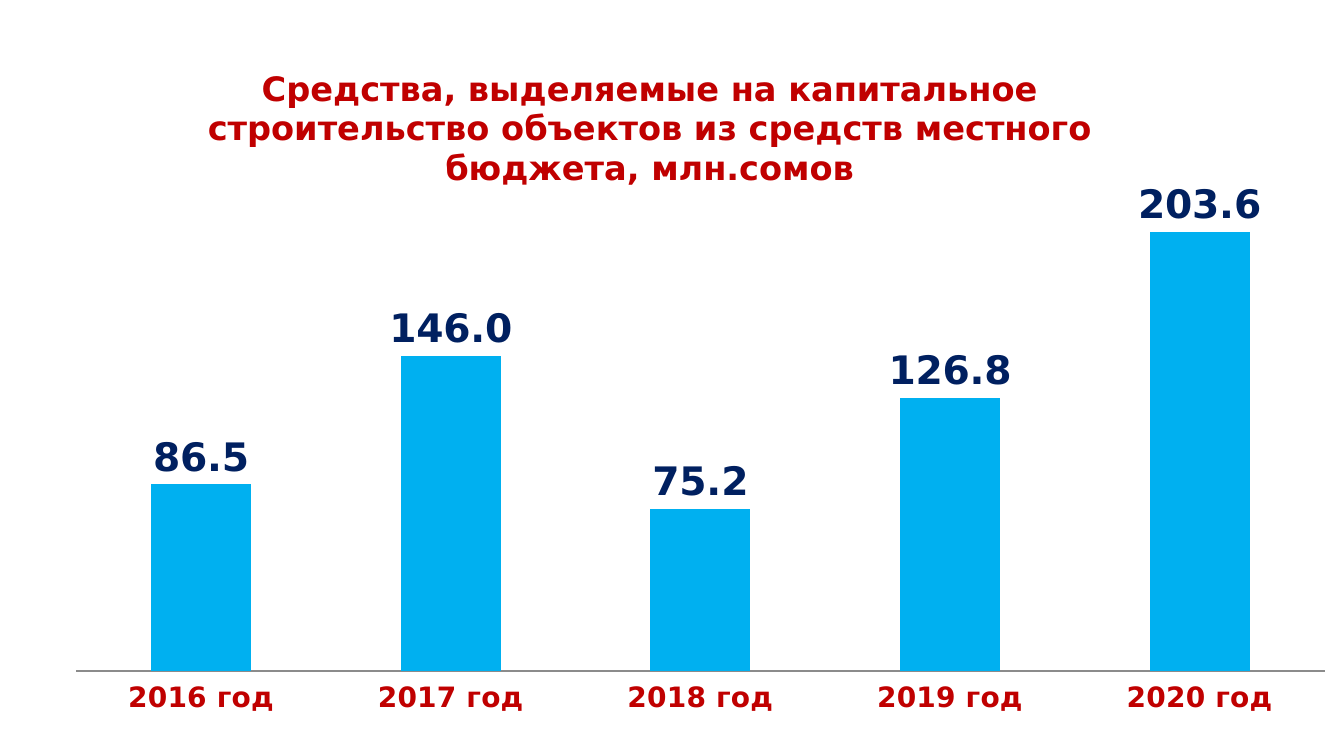
from dataclasses import dataclass
from lxml.etree import SubElement
from pptx import Presentation
from pptx.chart.data import CategoryChartData
from pptx.dml.color import RGBColor
from pptx.enum.chart import XL_CHART_TYPE, XL_LABEL_POSITION, XL_TICK_LABEL_POSITION, XL_TICK_MARK
from pptx.oxml import parse_xml
from pptx.oxml.ns import nsdecls, qn
from pptx.util import Pt

PX = 9525


@dataclass(frozen=True)
class Theme:
    """Colours, fonts and type sizes of the slide."""
    red: str = "C00000"
    navy: str = "002060"
    sky: str = "00B0F0"
    grey: str = "8B8B8B"
    black: str = "000000"
    base: str = "Calibri"
    face: str = "DejaVu Sans"
    small: int = 10
    tick: int = 20
    head: int = 24
    label: int = 28


THEME = Theme()
YEARS = range(2016, 2021)
FUNDS = (86.5, 146.0, 75.2, 126.8, 203.6)
TITLE = ("Средства, выделяемые на капитальное строительство объектов "
         "из средств местного бюджета, млн.сомов")


def style(font, size, color, name=THEME.face, bold=True):
    """Set the look of a font."""
    font.size, font.bold, font.name = Pt(size), bold, name
    font.color.rgb = RGBColor.from_string(color)


def write(frame, text, **form):
    """Put formatted text into a frame."""
    run = frame.paragraphs[0].add_run()
    run.text = text
    style(run.font, **form)


def place(host, index, **parts):
    """Give a chart part a manual layout."""
    for old in host.findall(qn("c:layout")):
        host.remove(old)
    layout = parse_xml(f"<c:layout {nsdecls('c')}/>")
    host.insert(index, layout)
    manual = SubElement(layout, qn("c:manualLayout"))
    for key, val in parts.items():
        SubElement(manual, qn(f"c:{key}")).set("val", str(val))


def set_title(chart):
    """Write the chart title and set its place."""
    chart.has_title = True
    title = chart.chart_title
    write(title.text_frame, TITLE, size=THEME.head, color=THEME.red)
    title.include_in_layout = False
    place(title._element, 1, xMode="edge", yMode="edge", x=0.14, y=0.04)


def set_axes(chart):
    """Format the year axis and hide the value axis."""
    years, funds = chart.category_axis, chart.value_axis
    years.major_tick_mark = years.minor_tick_mark = XL_TICK_MARK.NONE
    years.tick_label_position = XL_TICK_LABEL_POSITION.LOW
    years.has_major_gridlines = funds.has_major_gridlines = False
    years.format.line.color.rgb = RGBColor.from_string(THEME.grey)
    years.format.line.width = Pt(0.75)
    style(years.tick_labels.font, THEME.tick, THEME.red)
    funds.minimum_scale, funds.maximum_scale = 0, 250
    funds.visible = False


def set_bars(plot):
    """Colour the bars and label their values."""
    plot.gap_width = 150
    plot.vary_by_categories = False
    bars = plot.series[0]
    bars.format.fill.solid()
    bars.format.fill.fore_color.rgb = RGBColor.from_string(THEME.sky)
    labels = bars.data_labels
    labels.show_value = True
    labels.number_format, labels.number_format_is_linked = "#,##0.0", False
    labels.position = XL_LABEL_POSITION.OUTSIDE_END
    style(labels.font, THEME.label, THEME.navy)


def add_funds(slide, left, top, width, height):
    """Draw the chart of yearly funds in the given box."""
    data = CategoryChartData(number_format="#,##0.0")
    data.categories = [f"{year} год" for year in YEARS]
    data.add_series("Series 1", FUNDS)
    box = [side * PX for side in (left, top, width, height)]
    chart = slide.shapes.add_chart(XL_CHART_TYPE.COLUMN_CLUSTERED, *box, data).chart
    style(chart.font, THEME.small, THEME.black, THEME.base, False)
    chart.has_legend = False
    set_title(chart)
    set_axes(chart)
    set_bars(chart.plots[0])
    area = chart._chartSpace.find(".//" + qn("c:plotArea"))
    place(area, 0, layoutTarget="inner", xMode="edge", yMode="edge",
          x=0.044, y=0.14, w=0.956, h=0.743)


def main():
    """Build and save the slide."""
    deck = Presentation()
    deck.slide_width, deck.slide_height = 1280 * PX, 720 * PX
    slide = deck.slides.add_slide(deck.slide_layouts[6])
    add_funds(slide, 18, 29, 1244, 691)
    deck.save("out.pptx")


if __name__ == "__main__":
    main()
